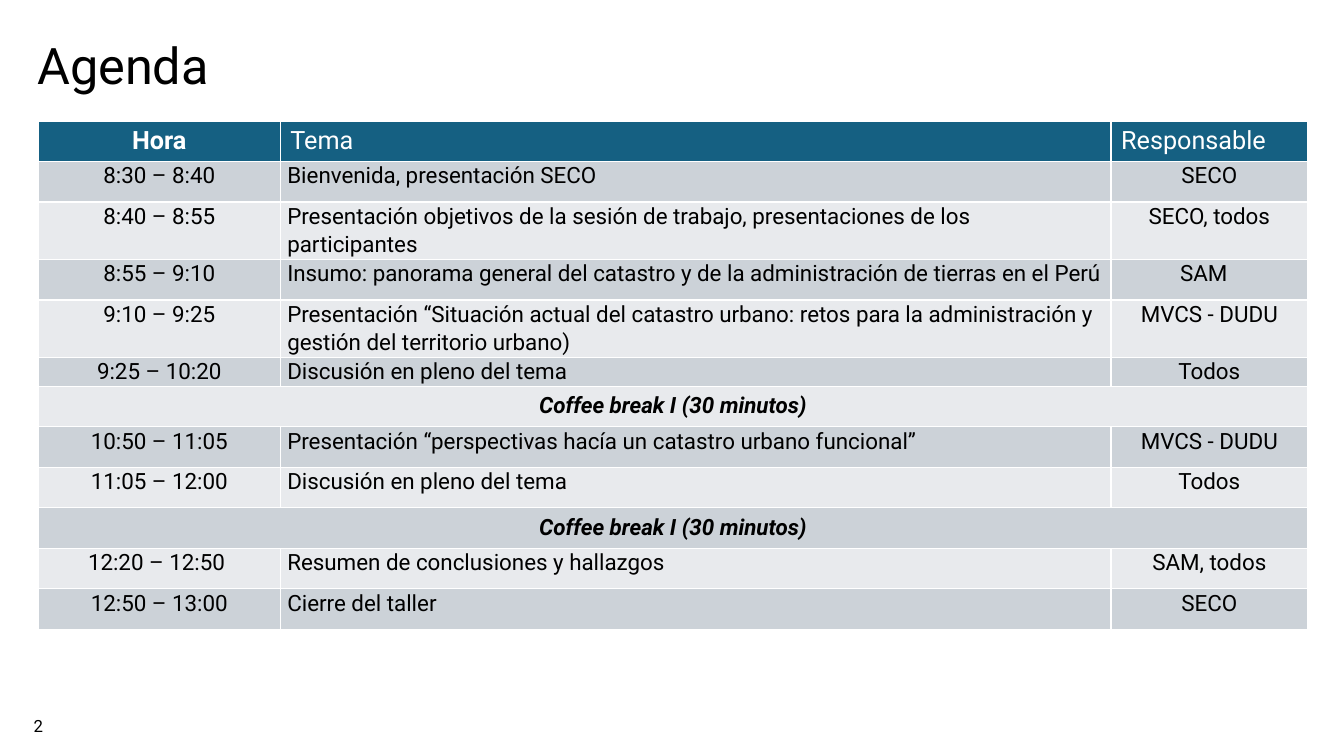
from dataclasses import dataclass

from lxml.etree import SubElement
from pptx import Presentation
from pptx.dml.color import RGBColor
from pptx.enum.text import MSO_ANCHOR, PP_ALIGN
from pptx.oxml.ns import qn
from pptx.util import Inches, Pt

# Content
TITLE = "Agenda"
PAGE_NUMBER = "2"
HEADER = ("Hora", "Tema", "Responsable")
COFFEE = ("Coffee break I (30 minutos)",)
SESSIONS = [
    ("8:30 – 8:40", "Bienvenida, presentación SECO", "SECO"),
    ("8:40 – 8:55", "Presentación objetivos de la sesión de trabajo, "
     "presentaciones de los participantes", "SECO, todos"),
    ("8:55 – 9:10", "Insumo: panorama general del catastro y de la "
     "administración de tierras en el Perú", "SAM  "),
    ("9:10 – 9:25", "Presentación “Situación actual del catastro urbano: retos para "
     "la administración y gestión del territorio urbano)", "MVCS - DUDU"),
    ("9:25 – 10:20", "Discusión en pleno del tema", "Todos"),
    COFFEE,
    ("10:50 – 11:05", "Presentación “perspectivas hacía un catastro urbano funcional”",
     "MVCS - DUDU"),
    ("11:05 – 12:00", "Discusión en pleno del tema", "Todos"),
    COFFEE,
    ("12:20 – 12:50 ", "Resumen de conclusiones y hallazgos", "SAM, todos"),
    ("12:50 – 13:00", "Cierre del taller", "SECO"),
]
COLUMN_WIDTHS = (2.4, 8.24, 1.95)
TABLE_LEFT, TABLE_TOP, TABLE_HEIGHT = 0.38, 1.2, 5.02
SPECIAL_HEIGHTS = {2: 0.56, 4: 0.56, 5: 0.28}  # two-line rows and the compact row


@dataclass(frozen=True)
class Theme:
    font: str = "Roboto"
    ink: str = "000000"
    white: str = "FFFFFF"
    header: str = "156082"
    bands: tuple = ("CCD2D8", "E8EAED")
    title_size: int = 36
    header_size: int = 18
    body_size: int = 16
    number_size: int = 12


THEME = Theme()


def style(paragraph, size, color, align=PP_ALIGN.LEFT, bold=False, italic=False):
    paragraph.alignment = align
    font = paragraph.font
    font.name, font.size = THEME.font, Pt(size)
    font.bold, font.italic = bold, italic
    font.color.rgb = RGBColor.from_string(color)


def add_text(slide, box, text, size, anchor, align=PP_ALIGN.LEFT):
    frame = slide.shapes.add_textbox(*map(Inches, box)).text_frame
    frame.word_wrap = True
    frame.vertical_anchor = anchor
    frame.text = text
    style(frame.paragraphs[0], size, THEME.ink, align)
    return frame.paragraphs[0]


def paint_cell(cell, color):
    # Borders come before the fill in the cell properties
    properties = cell._tc.get_or_add_tcPr()
    for side in ("a:lnL", "a:lnR", "a:lnT", "a:lnB"):
        line = SubElement(properties, qn(side), w=str(Pt(1)))
        SubElement(SubElement(line, qn("a:solidFill")), qn("a:srgbClr"), val=THEME.white)
    cell.fill.solid()
    cell.fill.fore_color.rgb = RGBColor.from_string(color)


def fill_header(table):
    for column, text in enumerate(HEADER):
        cell = table.cell(0, column)
        paint_cell(cell, THEME.header)
        cell.text = text
        first = column == 0
        style(cell.text_frame.paragraphs[0], THEME.header_size, THEME.white,
              PP_ALIGN.CENTER if first else PP_ALIGN.LEFT, bold=first)


def fill_session(table, row, session):
    is_break = len(session) == 1
    for column in range(len(HEADER)):
        paint_cell(table.cell(row, column), THEME.bands[(row - 1) % 2])
    if is_break:
        table.cell(row, 0).merge(table.cell(row, len(HEADER) - 1))
    for column, text in enumerate(session):
        cell = table.cell(row, column)
        cell.text = text
        if not is_break:
            cell.margin_left = cell.margin_right = Inches(0.07)
            cell.margin_top = cell.margin_bottom = 0
        paragraph = cell.text_frame.paragraphs[0]
        paragraph.line_spacing, paragraph.space_after = 1.07, Pt(8)
        style(paragraph, THEME.body_size, THEME.ink,
              PP_ALIGN.LEFT if column == 1 else PP_ALIGN.CENTER, is_break, is_break)


def add_agenda(slide):
    row_count = len(SESSIONS) + 1
    table = slide.shapes.add_table(
        row_count, len(HEADER), Inches(TABLE_LEFT), Inches(TABLE_TOP),
        Inches(sum(COLUMN_WIDTHS)), Inches(TABLE_HEIGHT)).table
    for column, width in zip(table.columns, COLUMN_WIDTHS):
        column.width = Inches(width)
    # Regular rows share the height left by the special ones
    regular = ((TABLE_HEIGHT - sum(SPECIAL_HEIGHTS.values()))
               / (row_count - len(SPECIAL_HEIGHTS)))
    for index, row in enumerate(table.rows):
        row.height = Inches(SPECIAL_HEIGHTS.get(index, regular))
    fill_header(table)
    for row, session in enumerate(SESSIONS, start=1):
        fill_session(table, row, session)


def main():
    presentation = Presentation()
    presentation.slide_width, presentation.slide_height = Inches(13.33), Inches(7.5)
    slide = presentation.slides.add_slide(presentation.slide_layouts[6])

    # Page number, agenda table, title
    add_text(slide, (0.1, 7.04, 0.56, 0.33), PAGE_NUMBER, THEME.number_size,
             MSO_ANCHOR.MIDDLE, PP_ALIGN.CENTER)
    add_agenda(slide)
    title = add_text(slide, (0.27, 0.3, 7.31, 0.7), TITLE, THEME.title_size,
                     MSO_ANCHOR.BOTTOM)
    title.line_spacing = 0.9

    presentation.save("out.pptx")


if __name__ == "__main__":
    main()
